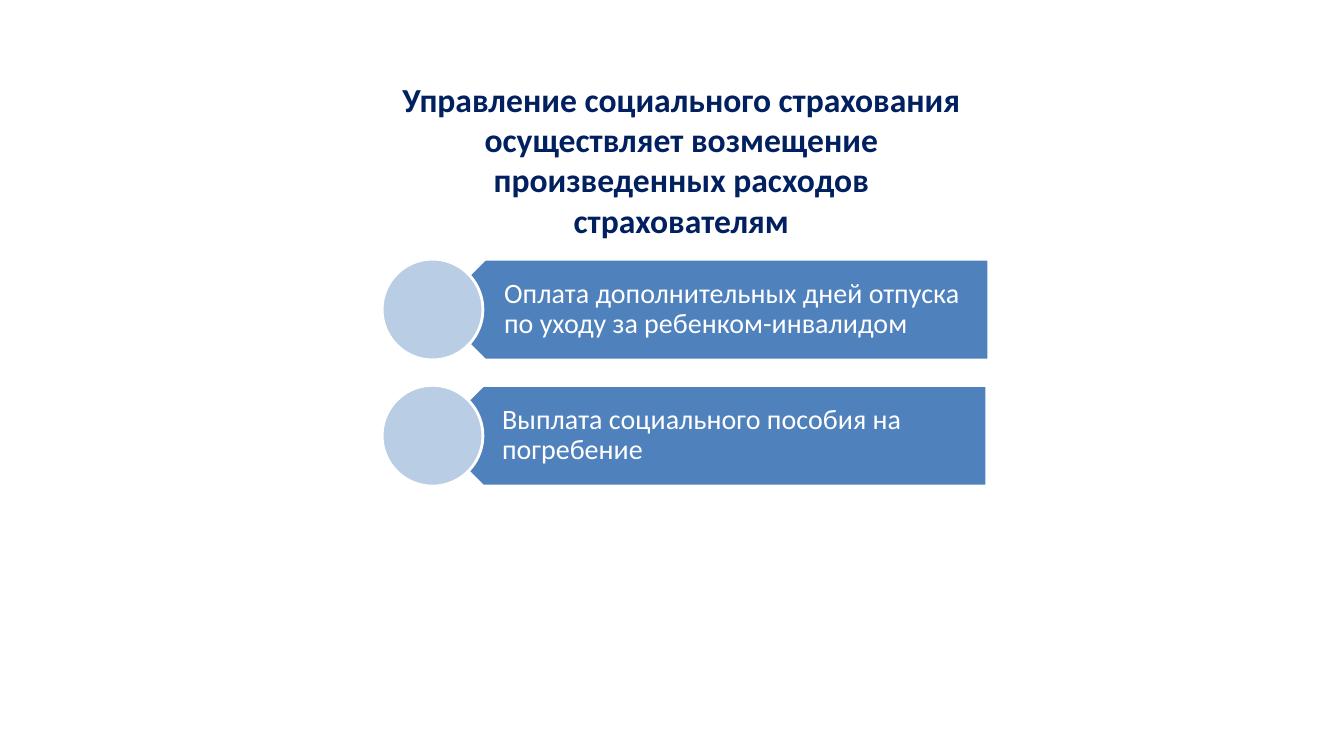
import pptx
import pptx.util
import pptx.dml.color
import pptx.enum.shapes
import pptx.enum.text

Cm = pptx.util.Cm
Pt = pptx.util.Pt
RGBColor = pptx.dml.color.RGBColor
SHAPE = pptx.enum.shapes.MSO_SHAPE
ANCHOR = pptx.enum.text.MSO_ANCHOR
ALIGN = pptx.enum.text.PP_ALIGN
FIT = pptx.enum.text.MSO_AUTO_SIZE

NAVY = RGBColor(0x00, 0x20, 0x60)
BLUE = RGBColor(0x4F, 0x81, 0xBD)
PALE = RGBColor(0xB9, 0xCD, 0xE5)
WHITE = RGBColor(0xFF, 0xFF, 0xFF)

TITLE = ("Управление социального страхования осуществляет возмещение "
         "произведенных расходов страхователям")
# Each payment with the offset of its bar from the circle's left edge, in cm
ROWS = [
    ("Оплата дополнительных дней отпуска по уходу за ребенком-инвалидом", 1.32),
    ("Выплата социального пособия на погребение", 1.27),
]
HIGH = 2.54    # height of a row and diameter of its circle
PITCH = 3.18


def write(frame, text, size, color, bold=False):
    frame.text = text
    para = frame.paragraphs[0]
    font = para.runs[0].font
    font.name, font.size, font.bold = "Calibri", Pt(size), bold
    font.color.rgb = color
    return para


def add_title(slide, left, top, width, height):
    title = slide.shapes.title
    title.left, title.top = Cm(left), Cm(top)
    title.width, title.height = Cm(width), Cm(height)
    frame = title.text_frame
    frame.word_wrap = True
    frame.auto_size = FIT.SHAPE_TO_FIT_TEXT
    frame.vertical_anchor = ANCHOR.TOP
    para = write(frame, TITLE, 24, NAVY, True)
    para.alignment = ALIGN.CENTER


def add_form(slide, kind, left, top, width, fill):
    form = slide.shapes.add_shape(kind, Cm(left), Cm(top), Cm(width), Cm(HIGH))
    form.shadow.inherit = False
    form.fill.solid()
    form.fill.fore_color.rgb = fill
    form.line.color.rgb = WHITE
    form.line.width = Pt(2)
    return form


def add_row(slide, left, top, text, shift):
    """Draw a left-pointing bar, its label and the circle over its tip."""
    bar = add_form(slide, SHAPE.PENTAGON, left + shift, top, 13.97, BLUE)
    bar.rotation = 180
    label = slide.shapes.add_textbox(
        Cm(left + shift + HIGH / 4), Cm(top), Cm(13.34), Cm(HIGH))
    frame = label.text_frame
    frame.word_wrap = True
    frame.vertical_anchor = ANCHOR.MIDDLE
    frame.margin_left, frame.margin_right = Cm(1.12), Cm(0.41)
    frame.margin_top = frame.margin_bottom = Cm(0.2)
    para = write(frame, text, 20, WHITE)
    para.line_spacing = 0.9
    add_form(slide, SHAPE.OVAL, left, top, HIGH, PALE)


def main():
    deck = pptx.Presentation()
    deck.slide_width, deck.slide_height = Cm(33.87), Cm(19.05)
    slide = deck.slides.add_slide(deck.slide_layouts[5])
    for i, (text, shift) in enumerate(ROWS):
        add_row(slide, 9.63, 6.53 + i * PITCH, text, shift)
    add_title(slide, 9.73, 1.85, 14.88, 4.37)
    deck.save("out.pptx")


if __name__ == "__main__":
    main()
